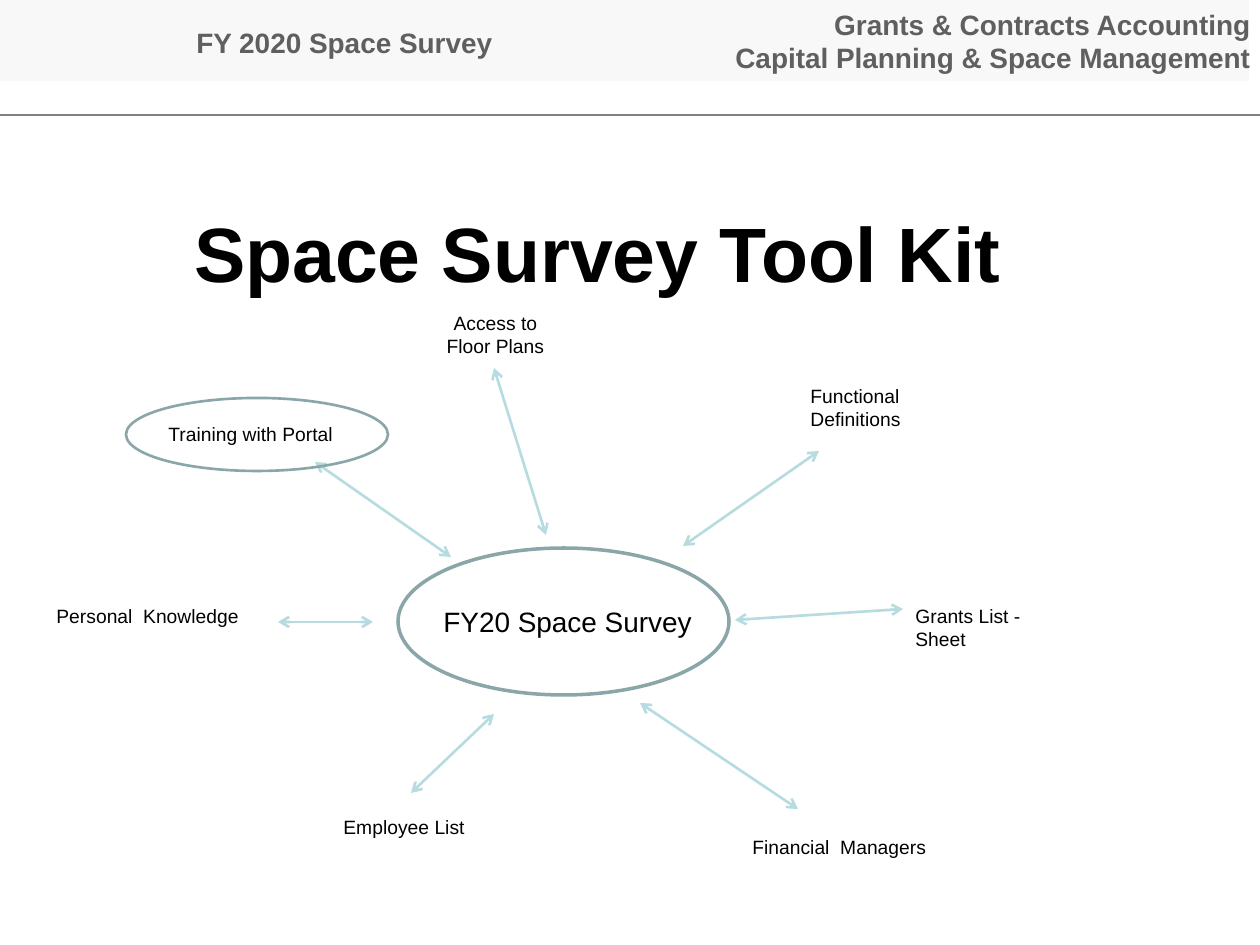
"""Builds the Space Survey Tool Kit slide."""
from dataclasses import dataclass

from lxml.etree import SubElement
from pptx import Presentation
from pptx.dml.color import RGBColor
from pptx.enum.shapes import MSO_CONNECTOR, MSO_SHAPE
from pptx.enum.text import PP_ALIGN
from pptx.oxml.ns import qn
from pptx.util import Inches, Pt

PX_PER_INCH = 126


def px(length):
    return round(Inches(1) * length / PX_PER_INCH)


@dataclass(frozen=True)
class Theme:
    font: str = "Arial"
    ink: str = "000000"
    header_ink: str = "5F5F5F"
    band: str = "F8F8F8"
    rule: str = "808080"
    ring: str = "8AA6A8"
    arrow: str = "B6DCDF"
    title_size: int = 44
    heading_size: int = 16
    label_size: int = 11


class SlideBuilder:
    def __init__(self, slide, theme):
        self.shapes = slide.shapes
        self.theme = theme

    def band(self, left, top, width, height):
        band = self.shapes.add_shape(MSO_SHAPE.RECTANGLE, *map(px, (left, top, width, height)))
        band.shadow.inherit = False
        band.fill.solid()
        band.fill.fore_color.rgb = RGBColor.from_string(self.theme.band)
        band.line.fill.background()

    def ring(self, left, top, width, height, weight):
        ring = self.shapes.add_shape(MSO_SHAPE.OVAL, *map(px, (left, top, width, height)))
        ring.shadow.inherit = False
        ring.fill.background()
        ring.line.color.rgb = RGBColor.from_string(self.theme.ring)
        ring.line.width = Pt(weight)

    def line(self, start, end, color, weight):
        line = self.shapes.add_connector(MSO_CONNECTOR.STRAIGHT, *map(px, (*start, *end)))
        line.line.color.rgb = RGBColor.from_string(color)
        line.line.width = Pt(weight)
        SubElement(line._element.spPr, qn("a:effectLst"))
        return line

    def double_arrow(self, start, end):
        outline = self.line(start, end, self.theme.arrow, 1.5).line._get_or_add_ln()
        for tip in ("a:headEnd", "a:tailEnd"):
            SubElement(outline, qn(tip), type="arrow")

    def text(self, lines, left, top, width, height, size=None, color=None,
             bold=False, align=PP_ALIGN.LEFT):
        frame = self.shapes.add_textbox(*map(px, (left, top, width, height))).text_frame
        frame.word_wrap = True
        frame.text = lines
        for paragraph in frame.paragraphs:
            paragraph.alignment = align
            paragraph.font.name = self.theme.font
            paragraph.font.size = Pt(size or self.theme.label_size)
            paragraph.font.bold = bold
            paragraph.font.color.rgb = RGBColor.from_string(color or self.theme.ink)


def main():
    deck = Presentation()
    deck.slide_width, deck.slide_height = Inches(10), Inches(7.5)
    theme = Theme()
    builder = SlideBuilder(deck.slides.add_slide(deck.slide_layouts[6]), theme)

    header = dict(size=theme.heading_size, color=theme.header_ink, bold=True)
    builder.band(-32, -5, 1281, 86)
    builder.text("Grants & Contracts Accounting\nCapital Planning & Space Management",
                 601, 1, 662, 81, align=PP_ALIGN.RIGHT, **header)
    builder.line((0, 115), (1260, 115), theme.rule, 0.75)
    builder.text("FY 2020 Space Survey", 184, 19, 350, 47, **header)
    builder.text("Space Survey Tool Kit", 168, 199, 860, 183, size=theme.title_size,
                 bold=True, align=PP_ALIGN.CENTER)

    builder.ring(398, 548, 331, 147, 2)
    arrows = [
        ((494, 368), (546, 535)),
        ((315, 462), (451, 557)),
        ((373, 622), (278, 622)),
        ((640, 703), (798, 809)),
        ((819, 451), (683, 546)),
        ((903, 609), (735, 620)),
        ((494, 714), (411, 793)),
    ]
    for start, end in arrows:
        builder.double_arrow(start, end)

    builder.text("FY20 Space Survey", 431, 598, 357, 47, size=theme.heading_size)
    builder.ring(126, 398, 262, 73, 1.5)
    builder.text("Access to\nFloor Plans", 388, 305, 215, 49, align=PP_ALIGN.CENTER)
    tools = [
        ("Personal  Knowledge", 44, 598, 248),
        ("Training with Portal", 156, 416, 217),
        ("Employee List", 331, 809, 184),
        ("Functional Definitions", 798, 378, 184),
        ("Grants List - Sheet", 903, 598, 184),
        ("Financial  Managers", 740, 829, 248),
    ]
    for tool, left, top, width in tools:
        builder.text(tool, left, top, width, 57)

    deck.save("out.pptx")


if __name__ == "__main__":
    main()
